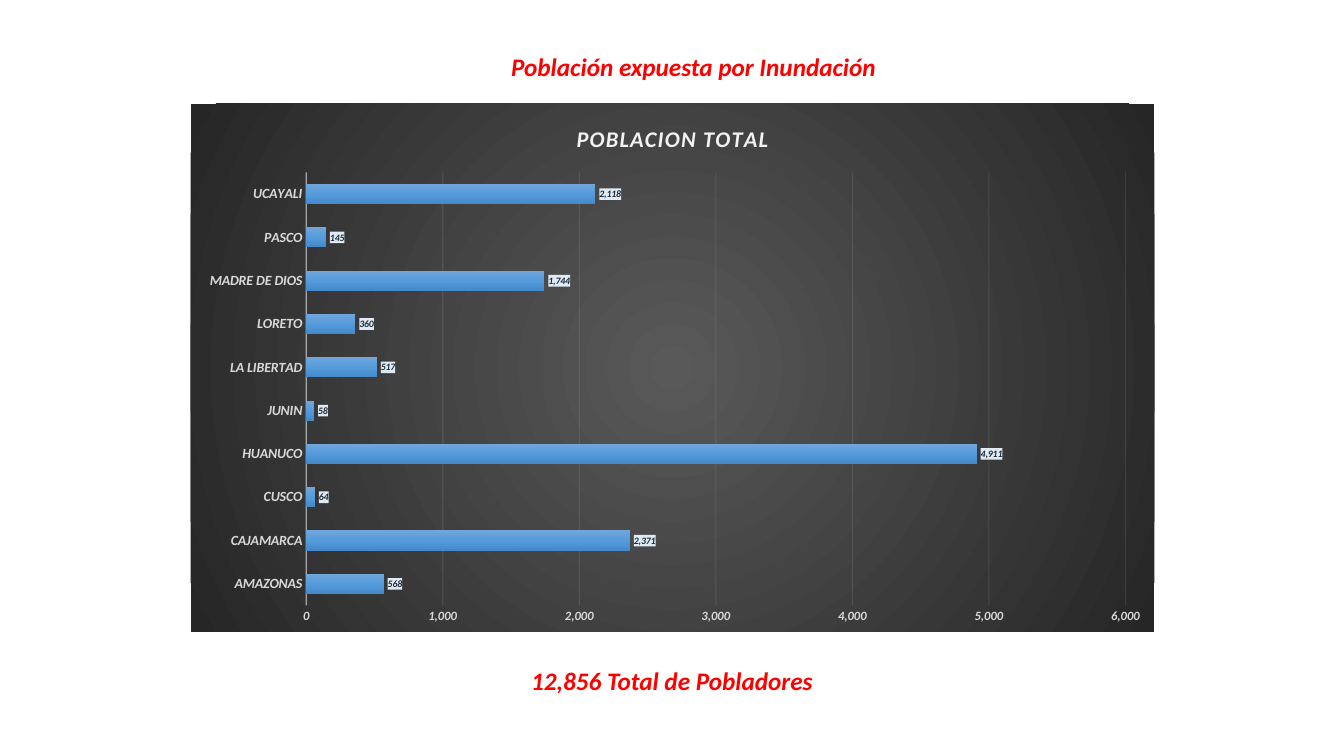
from dataclasses import dataclass

from lxml.etree import SubElement
from pptx import Presentation
from pptx.chart.data import CategoryChartData
from pptx.dml.color import RGBColor
from pptx.enum.chart import XL_CHART_TYPE, XL_LABEL_POSITION, XL_TICK_MARK
from pptx.enum.text import MSO_ANCHOR, PP_ALIGN
from pptx.oxml import parse_xml
from pptx.oxml.ns import nsdecls, qn
from pptx.util import Emu, Pt

PX = 9144  # 100 px to the inch


@dataclass(frozen=True)
class Theme:
    font: str = "Calibri"
    accent: str = "FF0000"
    title: str = "F2F2F2"
    axis: str = "D9D9D9"
    label: str = "222A35"
    label_fill: str = "DEEBF7"
    background: tuple = ((0, "595959"), (100, "262626"))
    bar: tuple = ((0, "71A6DB"), (50, "559BDB"), (100, "448ACA"))
    heading_size: int = 18
    title_size: int = 16
    category_size: int = 10
    value_size: int = 9
    label_size: int = 7


POPULATION = {
    "AMAZONAS": 568, "CAJAMARCA": 2371, "CUSCO": 64, "HUANUCO": 4911,
    "JUNIN": 58, "LA LIBERTAD": 517, "LORETO": 360, "MADRE DE DIOS": 1744,
    "PASCO": 145, "UCAYALI": 2118,
}


def format_font(font, name, size, color):
    font.name, font.size = name, Pt(size)
    font.bold = font.italic = True
    font.color.rgb = RGBColor.from_string(color)


def write_text(tf, text, *, font, size, color, align=PP_ALIGN.CENTER, spacing=0):
    p = tf.paragraphs[0]
    p.alignment = align
    r = p.add_run()
    r.text = text
    format_font(r.font, font, size, color)
    if spacing:
        r.font._element.set("spc", str(spacing))


def solid(color):
    return f'<a:solidFill><a:srgbClr val="{color}"/></a:solidFill>'


def gradient(stops, direction):
    gs = "".join(f'<a:gs pos="{pos * 1000}"><a:srgbClr val="{color}"/></a:gs>'
                 for pos, color in stops)
    return f'<a:gradFill><a:gsLst>{gs}</a:gsLst>{direction}</a:gradFill>'


def shape_properties(fill):
    return parse_xml(f'<c:spPr {nsdecls("c", "a")}>{fill}<a:ln><a:noFill/></a:ln></c:spPr>')


def format_line(line, color, width, opacity):
    line.width = Pt(width)
    line.color.rgb = RGBColor.from_string(color)
    rgb = line._ln.find(".//" + qn("a:srgbClr"))
    SubElement(rgb, qn("a:alpha")).set("val", str(opacity * 1000))


class SlideBuilder:
    def __init__(self, s, theme):
        self.s, self.theme = s, theme

    def heading(self, sp, text, left, top, width, height):
        t = self.theme
        sp.left, sp.top, sp.width, sp.height = (
            Emu(v * PX) for v in (left, top, width, height))
        tf = sp.text_frame
        tf.word_wrap = True
        tf.vertical_anchor = MSO_ANCHOR.TOP
        write_text(tf, text, font=t.font, size=t.heading_size, color=t.accent)

    def title(self, text, *box):
        self.heading(self.s.shapes.title, text, *box)

    def text(self, text, *box):
        self.heading(self.s.shapes.add_textbox(0, 0, 0, 0), text, *box)

    def bar_chart(self, name, values, *box):
        t = self.theme
        data = CategoryChartData(number_format="#,##0")
        data.categories = list(values)
        data.add_series(name, list(values.values()))
        chart = self.s.shapes.add_chart(
            XL_CHART_TYPE.BAR_CLUSTERED, *(Emu(v * PX) for v in box), data).chart
        chart.has_legend = False
        chart.font.name, chart.font.size = t.font, Pt(t.category_size)
        write_text(chart.chart_title.text_frame, name, font=t.font,
                   size=t.title_size, color=t.title, spacing=100)
        chart.chart_title.include_in_layout = False
        radial = ('<a:path path="circle"><a:fillToRect l="50000" t="50000" '
                  'r="50000" b="50000"/></a:path>')
        chart._chartSpace.find(qn("c:txPr")).addprevious(
            shape_properties(gradient(t.background, radial)))
        self.bars(chart.plots[0])
        self.axes(chart)
        self.plot_area(chart, x=0.12, y=0.13, w=0.85, h=0.82)

    def bars(self, plot):
        t = self.theme
        plot.gap_width, plot.overlap = 115, -20
        plot.vary_by_categories = False
        series = plot.series[0]
        series.format.fill.solid()
        old = series._element.find(qn("c:spPr"))
        old.getparent().replace(old, shape_properties(
            gradient(t.bar, '<a:lin ang="5400000" scaled="0"/>')))
        labels = series.data_labels
        labels.show_value = True
        labels.number_format, labels.number_format_is_linked = "#,##0", False
        labels.position = XL_LABEL_POSITION.OUTSIDE_END
        format_font(labels.font, t.font, t.label_size, t.label)
        labels._element.find(qn("c:txPr")).addprevious(
            shape_properties(solid(t.label_fill)))

    def axes(self, chart):
        t = self.theme
        category, value = chart.category_axis, chart.value_axis
        for axis, size in ((category, t.category_size), (value, t.value_size)):
            axis.major_tick_mark = axis.minor_tick_mark = XL_TICK_MARK.NONE
            format_font(axis.tick_labels.font, t.font, size, t.axis)
        format_line(category.format.line, t.title, 1, 54)
        value.minimum_scale, value.maximum_scale, value.major_unit = 0, 6000, 1000
        value.tick_labels.number_format = "#,##0"
        value.tick_labels.number_format_is_linked = False
        value.format.line.fill.background()
        value.has_major_gridlines = True
        format_line(value.major_gridlines.format.line, t.title, 0.75, 10)

    def plot_area(self, chart, **place):
        """Fix the inner plot area, in fractions of the chart."""
        area = chart._chartSpace.find(".//" + qn("c:plotArea"))
        for old in area.findall(qn("c:layout")):
            area.remove(old)
        settings = {"layoutTarget": "inner", "xMode": "edge", "yMode": "edge", **place}
        tags = "".join(f'<c:{tag} val="{val}"/>' for tag, val in settings.items())
        area.insert(0, parse_xml(f'<c:layout {nsdecls("c")}><c:manualLayout>'
                                 f'{tags}</c:manualLayout></c:layout>'))


def main():
    prs = Presentation()
    prs.slide_width, prs.slide_height = Emu(1333 * PX), Emu(750 * PX)
    s = prs.slides.add_slide(prs.slide_layouts[5])
    slide = SlideBuilder(s, Theme())
    slide.title("Población expuesta por Inundación", 495, 46, 386, 40)
    slide.text("12,856 Total de Pobladores", 499, 655, 335, 40)
    slide.bar_chart("POBLACION TOTAL", POPULATION, 189, 103, 956, 524)
    prs.save("out.pptx")


if __name__ == "__main__":
    main()
